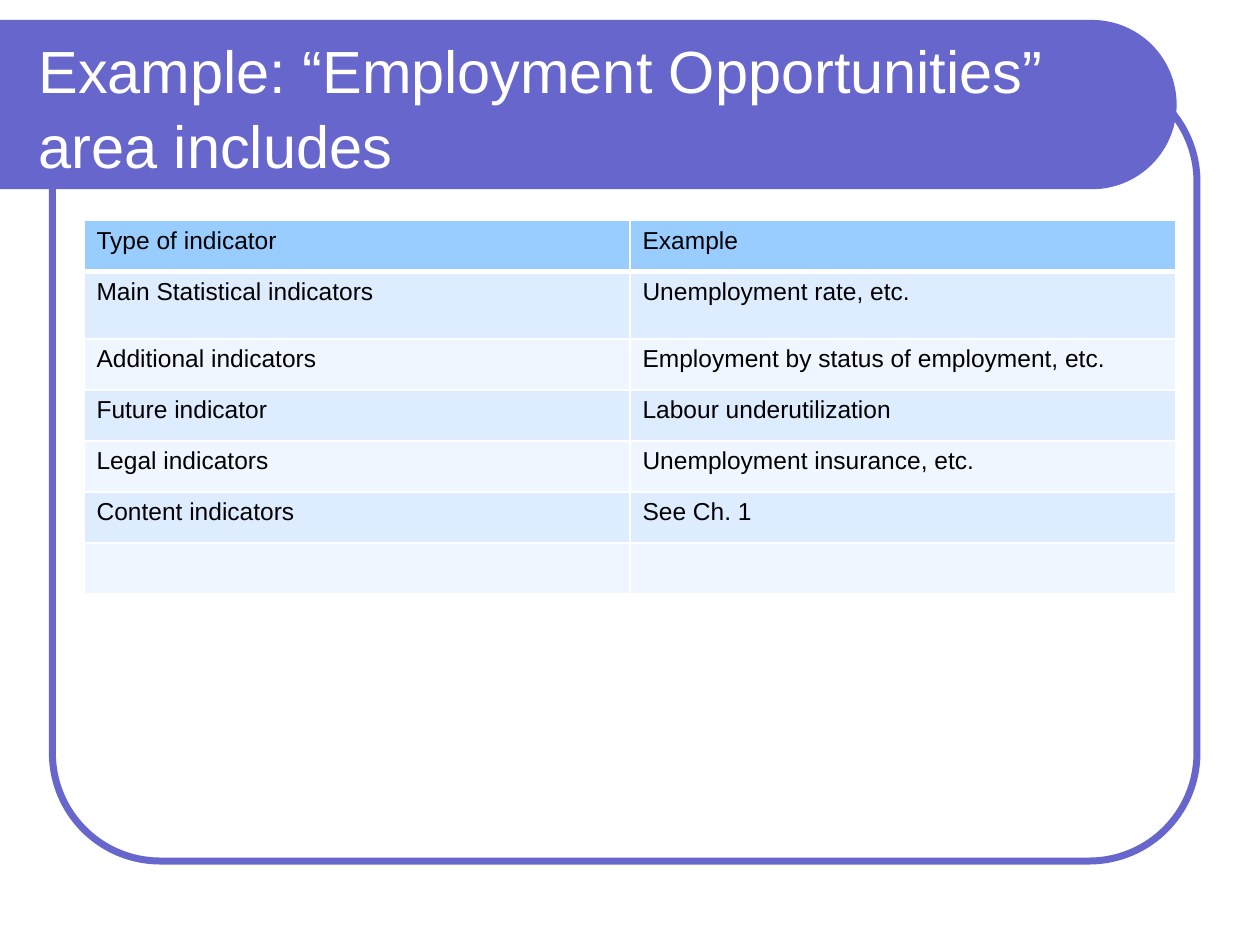
from math import cos, pi, sin
from typing import NamedTuple

from lxml.etree import SubElement
from pptx import Presentation
from pptx.dml.color import RGBColor
from pptx.enum.shapes import MSO_SHAPE as Shape
from pptx.enum.text import MSO_ANCHOR as Anchor
from pptx.oxml.ns import qn
from pptx.util import Pt

VIOLET, WHITE, BLACK = "6666CC", "FFFFFF", "000000"
HEADER_FILL, BANDS = "99CCFF", ("EFF6FF", "DEECFF")
FONT = "Arial"


class Box(NamedTuple):
    left: float
    top: float
    width: float
    height: float

    def lengths(self) -> list:
        return [Pt(v) for v in self]


class Row(NamedTuple):
    kind: str
    example: str
    height: float = 29.2


ROWS = [
    Row("Type of indicator", "Example"),
    Row("Main Statistical indicators", "Unemployment rate, etc.", 38.4),
    Row("Additional indicators", "Employment by status of employment, etc."),
    Row("Future indicator", "Labour underutilization"),
    Row("Legal indicators", "Unemployment insurance, etc."),
    Row("Content indicators", "See Ch. 1"),
    Row("", ""),
]


def paint(fill, color: str) -> None:
    fill.solid()
    fill.fore_color.rgb = RGBColor.from_string(color)


def add_run(p, text: str, size: float, color: str) -> None:
    r = p.add_run()
    r.text = text
    r.font.name, r.font.size = FONT, Pt(size)
    paint(r.font.fill, color)


def add_frame(s, box: Box) -> None:
    sp = s.shapes.add_shape(Shape.ROUNDED_RECTANGLE, *box.lengths())
    sp.adjustments[0] = 0.137
    sp.shadow.inherit = False
    sp.fill.background()
    paint(sp.line.fill, VIOLET)
    sp.line.width = Pt(4)


def add_banner(s, box: Box, steps: int = 60) -> None:
    """Band with a half-circle right end."""
    radius = box.height / 2
    cx, cy = box.left + box.width - radius, box.top + radius
    angles = [pi * i / steps - pi / 2 for i in range(steps + 1)]
    arc = [(Pt(cx + radius * cos(a)), Pt(cy + radius * sin(a))) for a in angles]
    outline = s.shapes.build_freeform(Pt(box.left), Pt(box.top))
    outline.add_line_segments(arc + [(Pt(box.left), Pt(box.top + box.height))])
    sp = outline.convert_to_shape()
    sp.shadow.inherit = False
    paint(sp.fill, VIOLET)
    paint(sp.line.fill, VIOLET)
    sp.line.width = Pt(0.75)


def add_title(s, box: Box, text: str) -> None:
    tf = s.shapes.add_textbox(*box.lengths()).text_frame
    tf.word_wrap = True
    tf.vertical_anchor = Anchor.MIDDLE
    p = tf.paragraphs[0]
    p.line_spacing = 1.04
    add_run(p, text, 34, WHITE)


def style_cell(cell, color: str, bottom: float) -> None:
    tc_pr = cell._tc.get_or_add_tcPr()
    for side, width in (("L", 1), ("R", 1), ("T", 1), ("B", bottom)):
        ln = SubElement(tc_pr, qn(f"a:ln{side}"), w=str(Pt(width)))
        SubElement(SubElement(ln, qn("a:solidFill")), qn("a:srgbClr"), val=WHITE)
    paint(cell.fill, color)


def add_indicator_table(s, left: float, top: float, width: float) -> None:
    box = Box(left, top, width, sum(row.height for row in ROWS))
    table = s.shapes.add_table(len(ROWS), 2, *box.lengths()).table
    for i, row in enumerate(ROWS):
        table.rows[i].height = Pt(row.height)
        for j, text in enumerate((row.kind, row.example)):
            cell = table.cell(i, j)
            style_cell(cell, BANDS[i % 2] if i else HEADER_FILL, 1 if i else 3)
            p = cell.text_frame.paragraphs[0]
            if text:
                add_run(p, text, 14, BLACK)
            else:
                p.font.size = Pt(14)


def main() -> None:
    prs = Presentation()
    prs.slide_width, prs.slide_height = Pt(720), Pt(540)
    s = prs.slides.add_slide(prs.slide_layouts[6])

    # Frame and title banner
    add_frame(s, Box(30, 42, 654, 450))
    add_banner(s, Box(0, 11.75, 672, 96))
    add_title(s, Box(15, 24.5, 631.5, 72),
              "Example: “Employment Opportunities” area includes")

    # Indicator table
    add_indicator_table(s, 48, 126, 624)

    prs.save("out.pptx")


if __name__ == "__main__":
    main()
